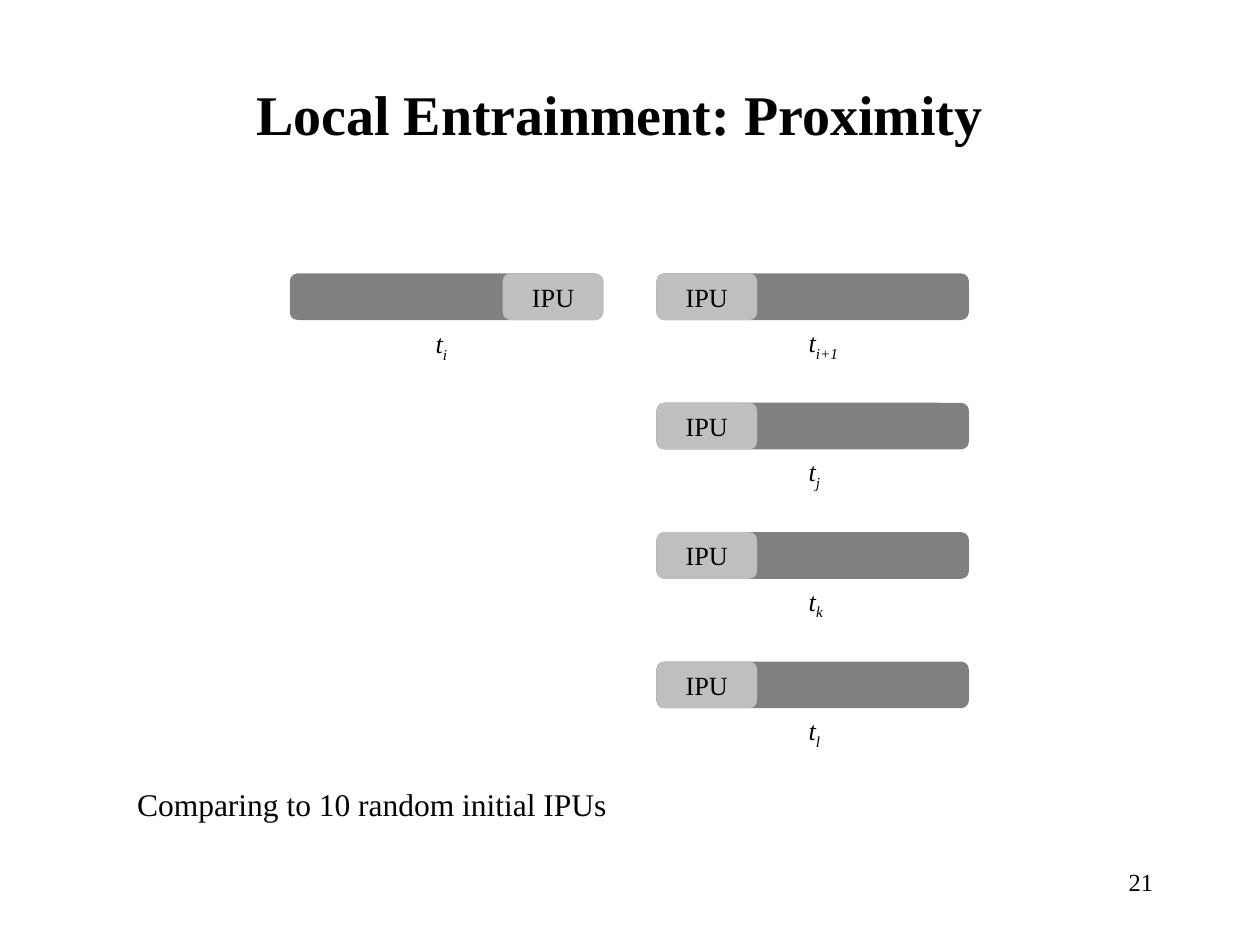
from pptx import Presentation
from pptx.dml.color import RGBColor
from pptx.enum.shapes import MSO_SHAPE
from pptx.enum.text import MSO_ANCHOR, MSO_AUTO_SIZE, PP_ALIGN
from pptx.util import Inches, Pt

ROUND = MSO_SHAPE.ROUNDED_RECTANGLE
MIDDLE = MSO_ANCHOR.MIDDLE
FIT = MSO_AUTO_SIZE.SHAPE_TO_FIT_TEXT
LEFT, CENTER, RIGHT = PP_ALIGN.LEFT, PP_ALIGN.CENTER, PP_ALIGN.RIGHT
COLORS = {"text": "000000", "turn": "808080", "ipu": "BFBFBF"}
FONT = "Times New Roman"
TURN_W, IPU_W, BAR_H = 2.48, 0.8, 0.37
TOP, STEP = 2.17, 1.027


def write(p, text, size=15, bold=False, italic=False, align=LEFT, sub=False):
    p.alignment = align
    r = p.add_run()
    r.text = text
    r.font.name = FONT
    r.font.size = Pt(size)
    r.font.bold = bold
    r.font.italic = italic
    r.font.color.rgb = RGBColor.from_string(COLORS["text"])
    if sub:
        r._r.get_or_add_rPr().set("baseline", "-25000")


def add_bar(shapes, x, y, w, color):
    sp = shapes.add_shape(ROUND, Inches(x), Inches(y), Inches(w), Inches(BAR_H))
    sp.shadow.inherit = False
    sp.fill.solid()
    sp.fill.fore_color.rgb = RGBColor.from_string(COLORS[color])
    sp.line.fill.background()
    return sp.text_frame


prs = Presentation()
prs.slide_width, prs.slide_height = Inches(10), Inches(7.5)
s = prs.slides.add_slide(prs.slide_layouts[5])

title = s.shapes.title
title.left, title.top = Inches(0.67), Inches(0.39)
title.width, title.height = Inches(8.5), Inches(1.01)
title.text_frame.vertical_anchor = MIDDLE
write(title.text_frame.paragraphs[0], "Local Entrainment: Proximity",
      size=32, bold=True, align=CENTER)

turns = [
    (2.3, 0, 3.99, 3.36, 0.38, 0.36, "i"),
    (5.21, 0, 5.21, 6.32, 0.37, 0.53, "i+1"),
    (5.21, 1, 5.21, 6.32, 0.37, 0.36, "j"),
    (5.21, 2, 5.21, 6.32, 0.37, 0.39, "k"),
    (5.21, 3, 5.21, 6.32, 0.37, 0.36, "l"),
]
for x, row, ipu_x, label_x, drop, label_w, index in turns:
    y = TOP + row * STEP
    group = s.shapes.add_group_shape()
    add_bar(group.shapes, x, y, TURN_W, "turn")
    tf = add_bar(group.shapes, ipu_x, y, IPU_W, "ipu")
    tf.vertical_anchor = MIDDLE
    write(tf.paragraphs[0], "IPU", align=CENTER)
    tb = group.shapes.add_textbox(Inches(label_x), Inches(y + drop),
                                  Inches(label_w), Inches(0.35))
    tf = tb.text_frame
    tf.word_wrap = False
    tf.auto_size = FIT
    write(tf.paragraphs[0], "t", italic=True)
    write(tf.paragraphs[0], index, italic=True, sub=True)

notes = [
    (0.99, 6.18, 5.03, 0.4, "Comparing to 10 random initial IPUs", 18, LEFT),
    (7.17, 6.83, 2.08, 0.5, "21", 14, RIGHT),
]
for x, y, w, h, text, size, align in notes:
    tb = s.shapes.add_textbox(Inches(x), Inches(y), Inches(w), Inches(h))
    tb.text_frame.word_wrap = True
    write(tb.text_frame.paragraphs[0], text, size=size, align=align)

prs.save("out.pptx")
